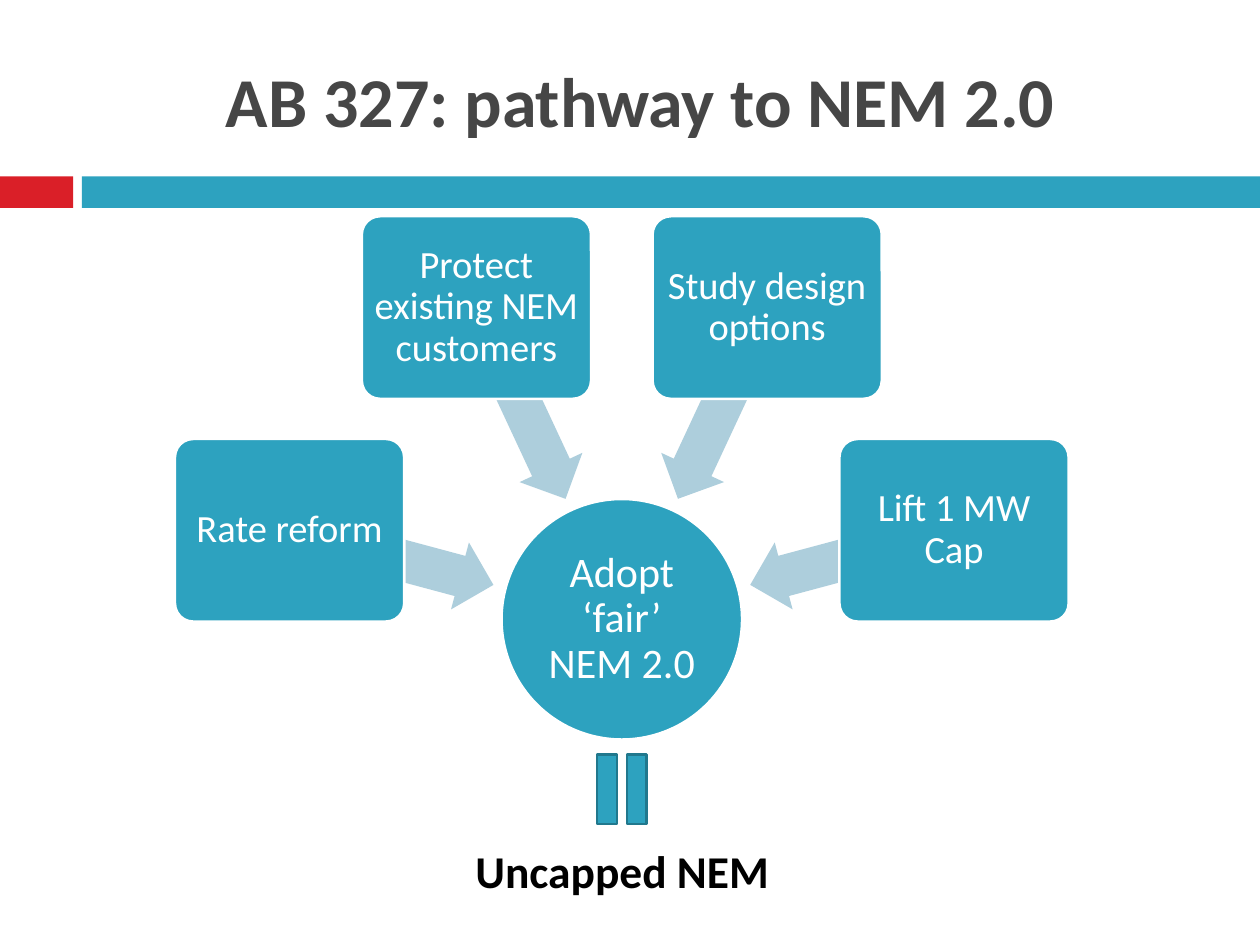
from math import cos, radians, sin

from pptx import Presentation
from pptx.dml.color import RGBColor
from pptx.enum.shapes import MSO_SHAPE as Preset
from pptx.enum.text import MSO_ANCHOR as Anchor, MSO_AUTO_SIZE as AutoSize, PP_ALIGN as Align
from pptx.util import Inches, Pt

COLUMNS, ROWS = 100, 75
WIDTH, HEIGHT = Inches(10), Inches(7.5)
TEAL, RED, PALE, EDGE = "2DA2BF", "DA1F28", "ADCEDC", "21788D"
WHITE, GREY, BLACK = "FFFFFF", "464646", "000000"
HUB_X, HUB_Y, HUB_SIZE = 49.35, 49.15, 19.1
ARROW_RADIUS, STEP_RADIUS = 18.9, 27.3
STEPS = ["Rate reform", "Protect existing NEM customers", "Study design options", "Lift 1 MW Cap"]
FIRST_ANGLE, ANGLE_STEP = 195, 50


def colour(value):
    return RGBColor.from_string(value)


def place(left, top, width, height):
    return (round(left * WIDTH / COLUMNS), round(top * HEIGHT / ROWS),
            round(width * WIDTH / COLUMNS), round(height * HEIGHT / ROWS))


def centred(x, y, width, height):
    return left_top(x, width), left_top(y, height), width, height


def left_top(middle, length):
    return middle - length / 2


def around_hub(angle, radius):
    return HUB_X + radius * cos(radians(angle)), HUB_Y + radius * sin(radians(angle))


def add_block(slide, preset, area, fill, edge=None, turn=0, adjust=()):
    block = slide.shapes.add_shape(preset, *place(*area))
    block.shadow.inherit = False
    block.rotation = turn
    block.fill.solid()
    block.fill.fore_color.rgb = colour(fill)
    if edge:
        block.line.color.rgb = colour(edge)
        block.line.width = Pt(1.5)
    else:
        block.line.fill.background()
    for position, amount in enumerate(adjust):
        block.adjustments[position] = amount
    return block


def write(holder, words, size, ink, bold=False, anchor=Anchor.MIDDLE, spacing=None, inset=None):
    frame = holder.text_frame
    frame.word_wrap = True
    frame.vertical_anchor = anchor
    if inset is not None:
        frame.margin_left = frame.margin_right = Inches(inset)
        frame.margin_top = frame.margin_bottom = Inches(inset)
    paragraph = frame.paragraphs[0]
    paragraph.alignment = Align.CENTER
    if spacing:
        paragraph.line_spacing = spacing
    run = paragraph.add_run()
    run.text = words
    run.font.name = "Calibri"
    run.font.size = Pt(size)
    run.font.bold = bold
    run.font.color.rgb = colour(ink)


def add_caption(slide, area, words, size, ink, anchor):
    caption = slide.shapes.add_textbox(*place(*area))
    write(caption, words, size, ink, bold=True, anchor=anchor)
    return caption


def add_hub(slide):
    hub = add_block(slide, Preset.OVAL, centred(HUB_X, HUB_Y, HUB_SIZE, HUB_SIZE), TEAL, WHITE)
    write(hub, "Adopt ‘fair’ NEM 2.0", 24, WHITE, spacing=0.9, inset=0.02)


def add_step(slide, words, angle):
    add_block(slide, Preset.LEFT_ARROW, centred(*around_hub(angle, ARROW_RADIUS), 16.7, 5.5),
              PALE, turn=angle, adjust=(0.6, 0.5))
    step = add_block(slide, Preset.ROUNDED_RECTANGLE,
                     centred(*around_hub(angle, STEP_RADIUS), 18.2, 14.5),
                     TEAL, WHITE, adjust=(0.1,))
    write(step, words, 22, WHITE, spacing=0.9, inset=0.05)


def main():
    deck = Presentation()
    deck.slide_width, deck.slide_height = WIDTH, HEIGHT
    slide = deck.slides.add_slide(deck.slide_layouts[6])

    add_block(slide, Preset.RECTANGLE, (0, 14, 5.8, 2.5), RED)
    add_block(slide, Preset.RECTANGLE, (6.5, 14, 93.5, 2.5), TEAL)
    add_caption(slide, (6.2, 2.5, 89.2, 10.8), "AB 327: pathway to NEM 2.0", 40, GREY, Anchor.MIDDLE)

    add_hub(slide)
    for position, words in enumerate(STEPS):
        add_step(slide, words, FIRST_ANGLE + position * ANGLE_STEP)

    add_block(slide, Preset.MATH_EQUAL, centred(HUB_X, 62.65, 7.5, 6.7), TEAL, EDGE, turn=90)
    outcome = add_caption(slide, (32.3, 66.4, 34.2, 5.4), "Uncapped NEM", 26, BLACK, Anchor.TOP)
    outcome.text_frame.auto_size = AutoSize.SHAPE_TO_FIT_TEXT

    deck.save("out.pptx")


if __name__ == "__main__":
    main()
